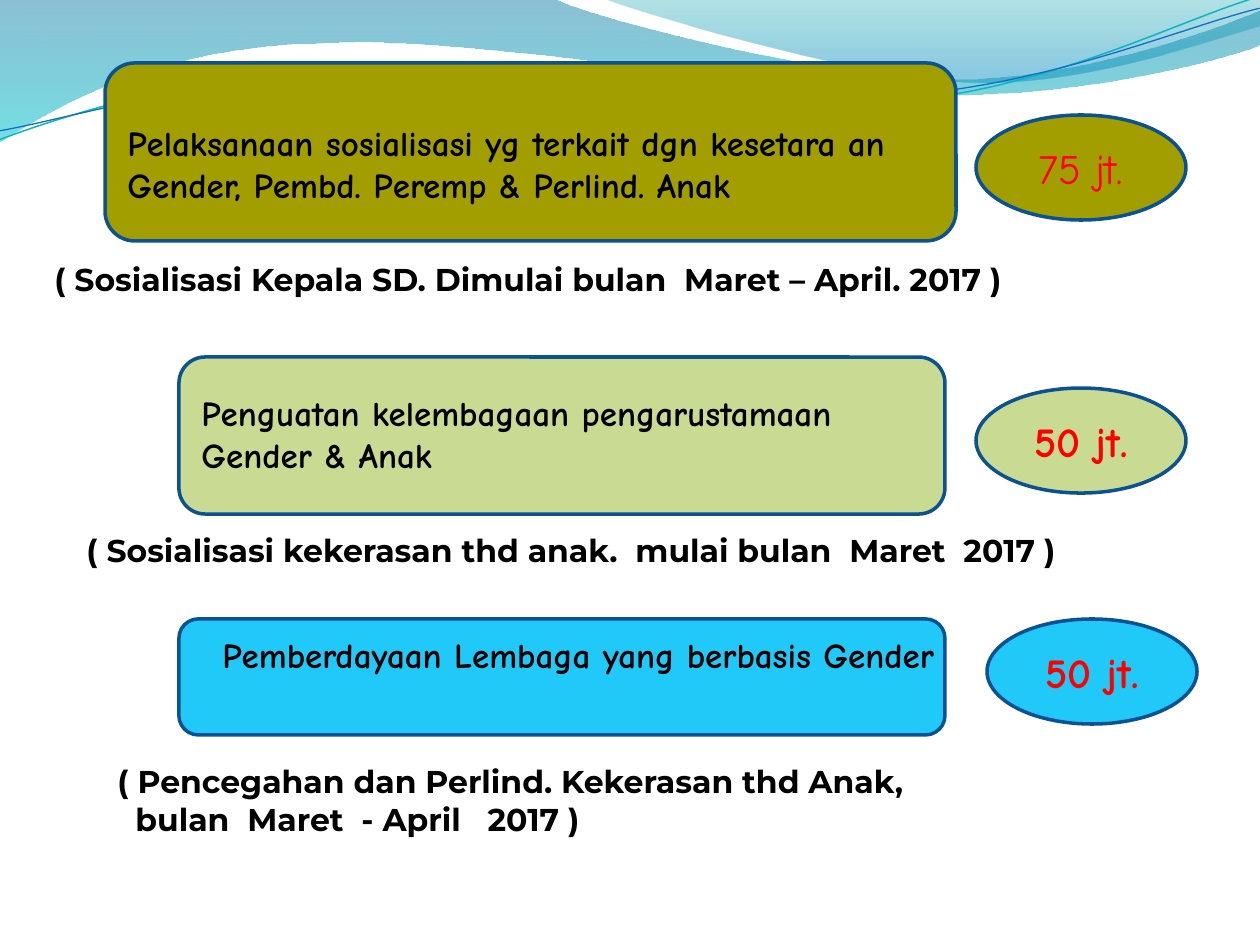
from lxml import etree
from pptx import Presentation
from pptx.dml.color import RGBColor
from pptx.enum.shapes import MSO_SHAPE
from pptx.enum.text import MSO_ANCHOR, MSO_AUTO_SIZE, PP_ALIGN
from pptx.oxml.ns import qn
from pptx.util import Emu, Pt

PX = 914400 / 126
COLORS = {
    "olive": "A29E00", "lime": "C9DA92", "sky": "20C9F8", "border": "0B5292",
    "black": "000000", "red": "FF0000",
    "deep": "0074A1", "cyan": "00C6CF", "teal": "00A1A9", "blue": "008BBF",
    "teal_line": "0AB8BF", "blue_line": "0F6FC6",
}


def px(n):
    return Emu(round(n * PX))


def rgb(name):
    return RGBColor.from_string(COLORS[name])


def write(tf, text, font="Comic Neue", size=20, color="black", bold=True,
          align=None, indent=0):
    """Fill a text frame, one paragraph a line; later lines are indented."""
    tf.word_wrap = True
    for i, line in enumerate(text.split("\n")):
        p = tf.add_paragraph() if i else tf.paragraphs[0]
        p.alignment = align
        if i and indent:
            p._p.get_or_add_pPr().set("marL", str(px(indent)))
        r = p.add_run()
        r.text = line
        r.font.name, r.font.size, r.font.bold = font, Pt(size), bold
        r.font.color.rgb = rgb(color)


def add_text(slide, x, y, w, h, text, **fmt):
    tf = slide.shapes.add_textbox(px(x), px(y), px(w), px(h)).text_frame
    write(tf, text, **fmt)
    tf.auto_size = MSO_AUTO_SIZE.SHAPE_TO_FIT_TEXT


def add_filled(slide, kind, x, y, w, h, color):
    sp = slide.shapes.add_shape(kind, px(x), px(y), px(w), px(h))
    sp.shadow.inherit = False
    sp.fill.solid()
    sp.fill.fore_color.rgb = rgb(color)
    sp.line.color.rgb = rgb("border")
    sp.line.width = Pt(2)
    return sp


def add_curve(slide, x, y, start, segments, close):
    """Outline of straight (x, y) and cubic (x1, y1, x2, y2, x, y) segments."""
    points = [(px(x + seg[i]), px(y + seg[i + 1]))
              for seg in segments for i in range(0, len(seg), 2)]
    builder = slide.shapes.build_freeform(px(x + start[0]), px(y + start[1]))
    builder.add_line_segments(points, close=close)
    sp = builder.convert_to_shape()
    sp.shadow.inherit = False
    # Turn each run of three vertices of a cubic segment into one curve
    vertices = iter(list(sp._element.iter(qn("a:lnTo"))))
    for seg in segments:
        first = next(vertices)
        if len(seg) == 6:
            first.tag = qn("a:cubicBezTo")
            for _ in range(2):
                vertex = next(vertices)
                first.append(vertex[0])
                vertex.getparent().remove(vertex)
    return sp


def add_wave(slide, x, y, start, segments, stops):
    sp = add_curve(slide, x, y, start, segments, True)
    sp.fill.gradient()
    sp.fill.gradient_angle = 270
    for stop, (position, color, _) in zip(sp.fill.gradient_stops, stops):
        stop.position = position
        stop.color.rgb = rgb(color)
    for clr, (_, _, alpha) in zip(sp._element.spPr.iter(qn("a:srgbClr")), stops):
        etree.SubElement(clr, qn("a:alpha")).set("val", str(alpha * 1000))
    sp.line.fill.background()


def add_strand(slide, x, y, start, segments, color, width):
    sp = add_curve(slide, x, y, start, segments, False)
    sp.rotation = 357.3
    sp.fill.background()
    sp.line.color.rgb = rgb(color)
    sp.line.width = Pt(width)


def add_header(slide, x, y):
    """Two translucent waves and two thin strands."""
    add_wave(slide, x, y, (0, 0), [
        (554, -1), (600, 21, 837, 79, 955, 79), (1075, 79, 1207, 33, 1260, 11),
        (1261, 45), (1239, 55, 1096, 96, 940, 95), (784, 95, 481, 35, 324, 43),
        (163, 45, 58, 105, -1, 142), (0, 0),
    ], [(0, "deep", 45), (1, "cyan", 55)])
    add_wave(slide, x, y, (604, -1), [
        (641, 14, 859, 78, 969, 82), (1079, 87, 1211, 40, 1260, 26), (1260, 0),
        (604, -1),
    ], [(0, "teal", 30), (0.8, "blue", 45)])
    add_strand(slide, x, y, (-3, 110), [
        (59, 90, 200, 52, 350, 53), (499, 53, 745, 118, 896, 114),
        (1049, 109, 1184, 45, 1260, 27),
    ], "teal_line", 0.85)
    add_strand(slide, x, y, (-2, 101), [
        (57, 94, 207, 57, 357, 58), (509, 58, 750, 112, 902, 108),
        (1052, 104, 1188, 52, 1262, 38),
    ], "blue_line", 0.75)


def add_program(slide, box, color, title, title_box, cost, cost_at, cost_bold,
                note, note_box):
    """Card, title, cost oval and note; inner boxes are relative to the card."""
    x, y, w, h = box

    def place(left, top, *size):
        return (x + left, y + top, *size)

    add_filled(slide, MSO_SHAPE.ROUNDED_RECTANGLE, *box, color)
    add_text(slide, *place(*title_box), title)
    oval = add_filled(slide, MSO_SHAPE.OVAL, *place(*cost_at, 210, 105), color)
    oval.text_frame.vertical_anchor = MSO_ANCHOR.MIDDLE
    write(oval.text_frame, cost, size=24, color="red", bold=cost_bold,
          align=PP_ALIGN.CENTER)
    add_text(slide, *place(*note_box), note, font="Montserrat", size=18, indent=18)


def main():
    prs = Presentation()
    prs.slide_width, prs.slide_height = px(1260), px(945)
    slide = prs.slides.add_slide(prs.slide_layouts[6])

    add_header(slide, 0, 0)

    # Programs, top to bottom
    add_program(
        slide, (105, 63, 851, 178), "olive",
        "Pelaksanaan sosialisasi yg terkait dgn kesetara an Gender, "
        "Pembd. Peremp & Perlind. Anak", (10, 52, 819, 97),
        "75 jt.", (871, 52), False,
        "( Sosialisasi Kepala SD. Dimulai bulan  Maret – April. 2017 )",
        (-63, 191, 1081, 50))
    add_program(
        slide, (179, 357, 766, 157), "lime",
        "Penguatan kelembagaan pengarustamaan Gender & Anak", (10, 28, 756, 97),
        "50 jt.", (797, 31), True,
        "( Sosialisasi kekerasan thd anak.  mulai bulan  Maret  2017 )",
        (-105, 168, 1092, 50))
    add_program(
        slide, (179, 619, 766, 116), "sky",
        "Pemberdayaan Lembaga yang berbasis Gender", (31, 8, 756, 97),
        "50 jt.", (808, 0), True,
        "( Pencegahan dan Perlind. Kekerasan thd Anak,\n"
        "bulan  Maret  - April   2017 )", (-74, 137, 987, 89))

    prs.save("out.pptx")


if __name__ == "__main__":
    main()
